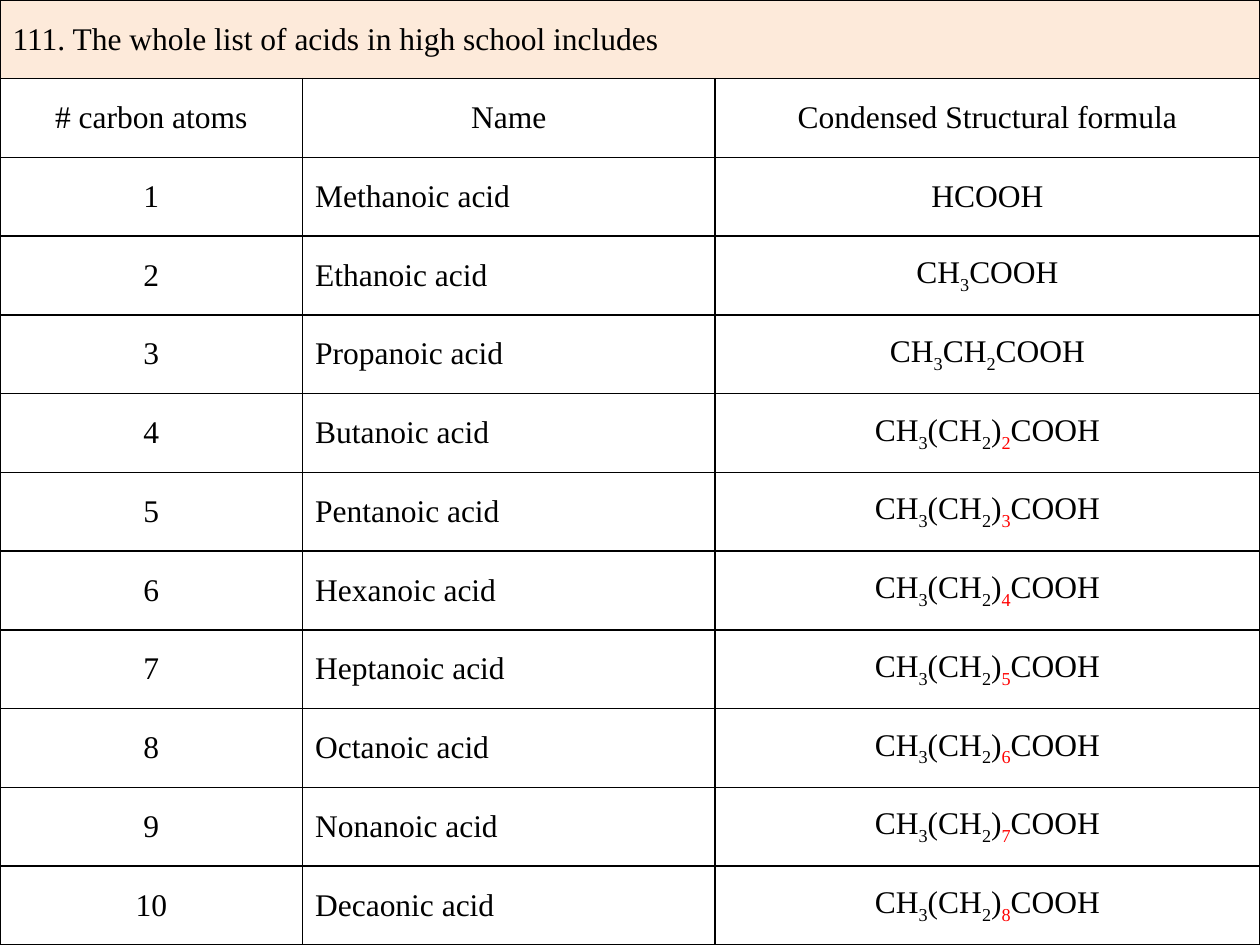
from itertools import groupby

from lxml.etree import SubElement
from pptx import Presentation
from pptx.dml.color import RGBColor
from pptx.enum.text import MSO_ANCHOR as Anchor, PP_ALIGN as Align
from pptx.oxml.ns import qn
from pptx.util import Cm, Pt

# Content
HEADING = "111. The whole list of acids in high school includes"
COLUMN_TITLES = ("# carbon atoms", "Name", "Condensed Structural formula")
ACID_NAMES = ("Methanoic", "Ethanoic", "Propanoic", "Butanoic", "Pentanoic",
              "Hexanoic", "Heptanoic", "Octanoic", "Nonanoic", "Decaonic")
SHORT_FORMULAS = {1: "HCOOH", 2: "CH3COOH", 3: "CH3CH2COOH"}

# Look
COLORS = {"text": "000000", "count": "FF0000", "heading": "FDEADA", "border": "000000"}
FONT = {"name": "Times New Roman", "size": Pt(18), "bold": False}
SLIDE_WIDTH, SLIDE_HEIGHT = Cm(25.4), Cm(19.05)
COLUMN_WIDTHS = (Cm(6.1), Cm(8.31), Cm(10.99))


def formula(carbons):
    """Longer chains repeat the CH2 group two times fewer than their carbons."""
    return SHORT_FORMULAS.get(carbons, f"CH3(CH2){carbons - 2}COOH")


def add_span(para, text, color="text", subscript=False):
    span = para.add_run()
    span.text = text
    for key, value in FONT.items():
        setattr(span.font, key, value)
    span.font.color.rgb = RGBColor.from_string(COLORS[color])
    if subscript:
        span._r.get_or_add_rPr().set("baseline", "-25000")


def write_formula(para, text):
    """Set digits as subscripts, with the count after a bracket in red."""
    previous = ""
    for is_digit, letters in groupby(text, str.isdigit):
        part = "".join(letters)
        color = "count" if is_digit and previous.endswith(")") else "text"
        add_span(para, part, color, is_digit)
        previous = part


def add_borders(cell):
    properties = cell._tc.get_or_add_tcPr()
    for position, side in enumerate(("lnL", "lnR", "lnT", "lnB")):
        line = SubElement(properties, qn(f"a:{side}"), w=str(Pt(1)))
        fill = SubElement(line, qn("a:solidFill"))
        SubElement(fill, qn("a:srgbClr"), val=COLORS["border"])
        properties.insert(position, line)


def main():
    deck = Presentation()
    deck.slide_width, deck.slide_height = SLIDE_WIDTH, SLIDE_HEIGHT
    page = deck.slides.add_slide(deck.slide_layouts[6])

    rows = [(HEADING, "", ""), COLUMN_TITLES]
    rows += [(str(carbons), f"{name} acid", formula(carbons))
             for carbons, name in enumerate(ACID_NAMES, 1)]

    # Table grid filling the page
    table = page.shapes.add_table(len(rows), len(COLUMN_WIDTHS), 0, 0,
                                  SLIDE_WIDTH, SLIDE_HEIGHT).table
    table.first_row = table.horz_banding = False
    for column, width in zip(table.columns, COLUMN_WIDTHS):
        column.width = width
    table.cell(0, 0).merge(table.cell(0, len(COLUMN_WIDTHS) - 1))

    # Cells
    for row_index, row in enumerate(rows):
        for column_index, text in enumerate(row):
            cell = table.cell(row_index, column_index)
            cell.vertical_anchor = Anchor.MIDDLE
            if row_index == 0:
                cell.fill.solid()
                cell.fill.fore_color.rgb = RGBColor.from_string(COLORS["heading"])
            else:
                cell.fill.background()
            add_borders(cell)
            if not text:
                continue
            para = cell.text_frame.paragraphs[0]
            is_left = row_index == 0 or (row_index > 1 and column_index == 1)
            para.alignment = Align.LEFT if is_left else Align.CENTER
            if row_index > 1 and column_index == 2:
                write_formula(para, text)
            else:
                add_span(para, text)

    deck.save("out.pptx")


if __name__ == "__main__":
    main()
